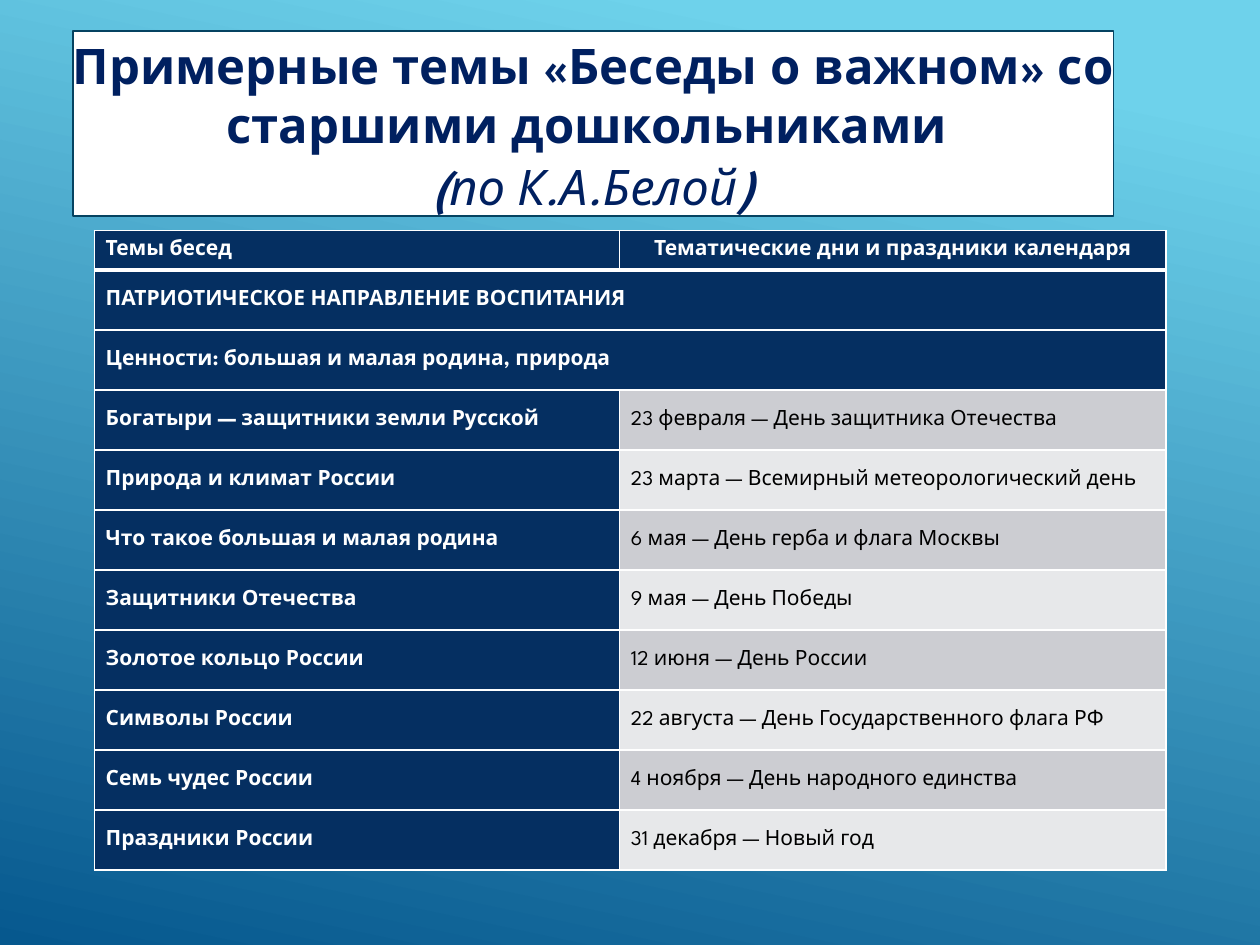
from dataclasses import dataclass

from lxml.etree import SubElement
from pptx import Presentation
from pptx.dml.color import RGBColor
from pptx.enum.shapes import MSO_SHAPE as Preset
from pptx.enum.text import MSO_ANCHOR as Anchor, MSO_AUTO_SIZE as AutoSize, PP_ALIGN as Align
from pptx.oxml.ns import qn
from pptx.util import Cm, Pt

FONT = "League Spartan"
COLOURS = {
    "sky": "6ED2EB",
    "sea": "06588E",
    "white": "FFFFFF",
    "black": "000000",
    "frame": "054361",
    "title": "002060",
    "navy": "052F61",
    "dark_band": "CCCDD2",
    "light_band": "E7E8EA",
}


@dataclass
class CellStyle:
    fill: str
    text: str = "white"
    bold: bool = True
    align: Align = Align.JUSTIFY
    bottom: float = 1


@dataclass
class Talk:
    topic: str
    day: str


SECTIONS = [
    "ПАТРИОТИЧЕСКОЕ НАПРАВЛЕНИЕ ВОСПИТАНИЯ",
    "Ценности: большая и малая родина, природа",
]
TALKS = [
    Talk("Богатыри — защитники земли Русской", "23 февраля — День защитника Отечества"),
    Talk("Природа и климат России", "23 марта — Всемирный метеорологический день"),
    Talk("Что такое большая и малая родина", "6 мая — День герба и флага Москвы"),
    Talk("Защитники Отечества", "9 мая — День Победы"),
    Talk("Золотое кольцо России", "12 июня — День России"),
    Talk("Символы России", "22 августа — День Государственного флага РФ"),
    Talk("Семь чудес России", "4 ноября — День народного единства"),
    Talk("Праздники России", "31 декабря — Новый год"),
]


def colour(name: str) -> RGBColor:
    return RGBColor.from_string(COLOURS[name])


def paint_background(slide) -> None:
    fill = slide.background.fill
    fill.gradient()
    fill.gradient_angle = 258
    for stop, name, position in zip(fill.gradient_stops, ("sky", "sea"), (0.1, 1)):
        stop.color.rgb = colour(name)
        stop.position = position


def add_title(slide) -> None:
    shape = slide.shapes.add_shape(Preset.RECTANGLE, Cm(1.47), Cm(0.63), Cm(20.98), Cm(3.73))
    shape.shadow.inherit = False
    shape.fill.solid()
    shape.fill.fore_color.rgb = colour("white")
    shape.line.color.rgb = colour("frame")
    shape.line.width = Pt(1)
    frame = shape.text_frame
    frame.word_wrap = True
    frame.auto_size = AutoSize.SHAPE_TO_FIT_TEXT
    frame.vertical_anchor = Anchor.TOP
    frame.margin_left = frame.margin_right = frame.margin_bottom = 0
    frame.margin_top = Cm(0.08)
    heading, author = frame.paragraphs[0], frame.add_paragraph()
    heading.add_run().text = "Примерные темы «Беседы о важном» со старшими дошкольниками "
    for text, bold in (("(", True), ("по К.А.Белой", False), (")", True)):
        run = author.add_run()
        run.text = text
        run.font.bold = bold
    for paragraph in (heading, author):
        paragraph.alignment = Align.CENTER
        paragraph.space_before = Pt(2)
        paragraph.font.name = FONT
        paragraph.font.size = Pt(28)
        paragraph.font.color.rgb = colour("title")
    heading.font.bold = True
    author.font.italic = True
    for paragraph in (heading, author):
        for run in paragraph.runs:
            run.font.name = FONT


def set_borders(cell, bottom: float) -> None:
    properties = cell._tc.get_or_add_tcPr()
    for side, width in (("L", 1), ("R", 1), ("T", 1), ("B", bottom)):
        line = SubElement(properties, qn(f"a:ln{side}"), w=str(Pt(width)))
        fill = SubElement(line, qn("a:solidFill"))
        SubElement(fill, qn("a:srgbClr"), val=COLOURS["white"])


def fill_cell(cell, text: str, style: CellStyle) -> None:
    set_borders(cell, style.bottom)
    cell.fill.solid()
    cell.fill.fore_color.rgb = colour(style.fill)
    cell.vertical_anchor = Anchor.MIDDLE
    cell.margin_left = cell.margin_right = Cm(0.23)
    cell.margin_top = cell.margin_bottom = Cm(0.1)
    cell.text = text
    paragraph = cell.text_frame.paragraphs[0]
    paragraph.alignment = style.align
    paragraph.line_spacing = 1.07
    paragraph.space_after = Pt(8)
    font = paragraph.font
    font.name, font.size, font.bold = FONT, Pt(12), style.bold
    font.color.rgb = colour(style.text)


def add_talks_table(slide) -> None:
    first_talk = 1 + len(SECTIONS)
    row_count = first_talk + len(TALKS)
    table = slide.shapes.add_table(row_count, 2, Cm(1.9), Cm(4.65), Cm(21.61), Cm(12.89)).table
    for column, width in zip(table.columns, (10.59, 11.02)):
        column.width = Cm(width)
    for index, row in enumerate(table.rows):
        row.height = Cm(1.21 if index else 0.79)

    navy = CellStyle("navy")
    fill_cell(table.cell(0, 0), "Темы бесед", CellStyle("navy", bottom=3))
    fill_cell(
        table.cell(0, 1),
        "Тематические дни и праздники календаря",
        CellStyle("navy", align=Align.CENTER, bottom=3),
    )
    for row, section in enumerate(SECTIONS, start=1):
        fill_cell(table.cell(row, 0), section, navy)
        fill_cell(table.cell(row, 1), "", navy)
        table.cell(row, 0).merge(table.cell(row, 1))
    for index, talk in enumerate(TALKS):
        row = first_talk + index
        band = "light_band" if index % 2 else "dark_band"
        fill_cell(table.cell(row, 0), talk.topic, navy)
        fill_cell(table.cell(row, 1), talk.day, CellStyle(band, "black", False))


def main() -> None:
    presentation = Presentation()
    presentation.slide_width, presentation.slide_height = Cm(25.4), Cm(19.05)
    slide = presentation.slides.add_slide(presentation.slide_layouts[6])
    paint_background(slide)
    add_title(slide)
    add_talks_table(slide)
    presentation.save("out.pptx")


if __name__ == "__main__":
    main()
